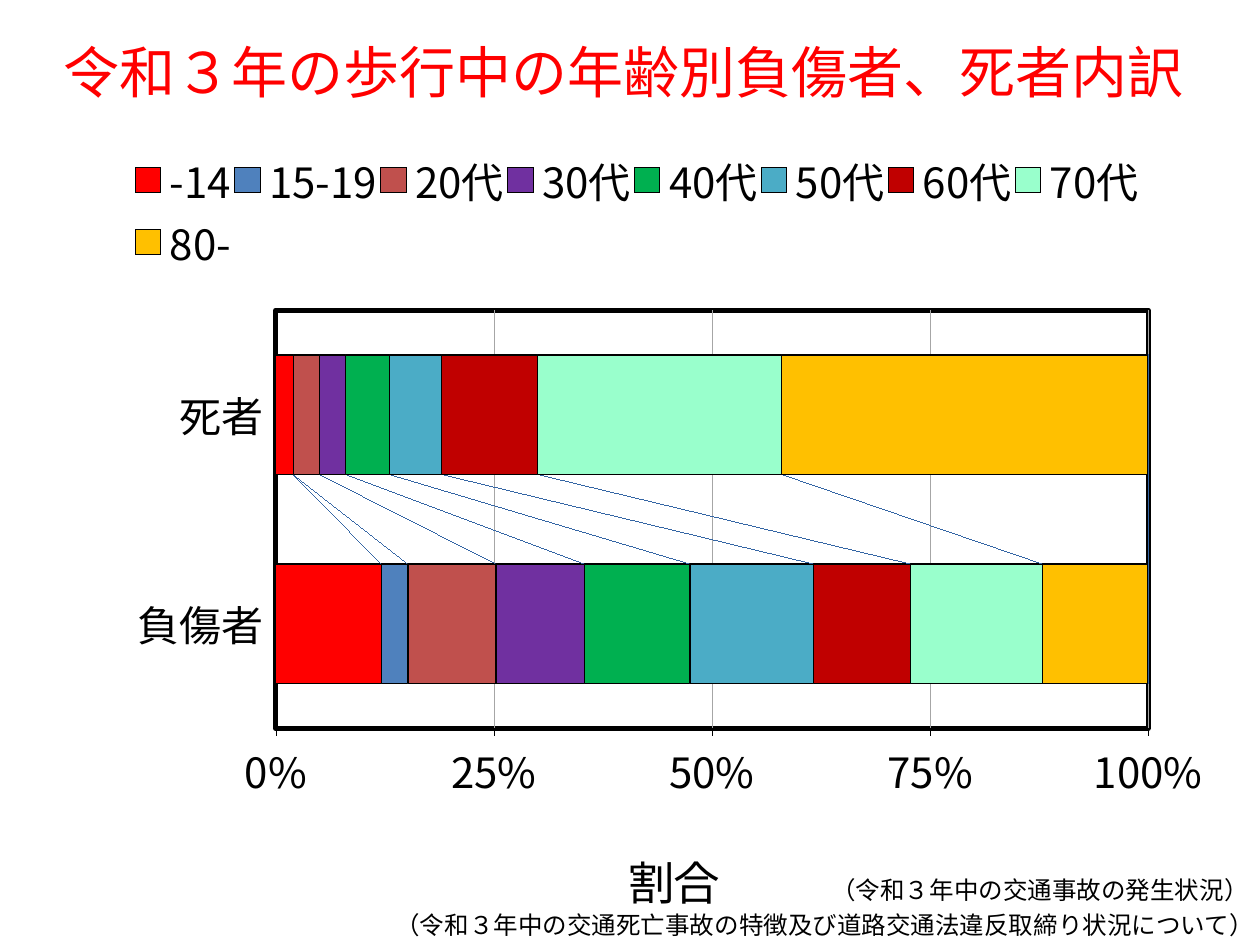
from lxml.etree import SubElement
from pptx import Presentation
from pptx.chart.data import CategoryChartData
from pptx.dml.color import RGBColor
from pptx.enum.chart import XL_CHART_TYPE, XL_LEGEND_POSITION, XL_TICK_LABEL_POSITION, XL_TICK_MARK
from pptx.enum.text import MSO_ANCHOR, PP_ALIGN
from pptx.oxml import parse_xml
from pptx.oxml.ns import nsdecls, qn
from pptx.util import Inches, Pt

FONT = "Noto Sans CJK JP"
WIDTH, HEIGHT = 10, 7.5
GROUPS = ["負傷者", "死者"]
AGES = [
    ("-14", (12, 2), "FF0000"),
    ("15-19", (3, 0), "4F81BD"),
    ("20代", (10, 3), "C0504D"),
    ("30代", (10, 3), "7030A0"),
    ("40代", (12, 5), "00B050"),
    ("50代", (14, 6), "4BACC6"),
    ("60代", (11, 11), "C00000"),
    ("70代", (15, 28), "99FFCC"),
    ("80-", (12, 42), "FFC000"),
]


def color(code):
    return RGBColor.from_string(code)


def box(left, top, width, height):
    return [Inches(v) for v in (left * WIDTH, top * HEIGHT, width * WIDTH, height * HEIGHT)]


def style_font(font, size, code="000000"):
    font.name, font.size, font.bold = FONT, Pt(size), False
    font.color.rgb = color(code)
    properties = font._element if hasattr(font, "_element") else font._rPr
    for old in properties.findall(qn("a:ea")):
        properties.remove(old)
    properties.find(qn("a:latin")).addnext(
        parse_xml(f'<a:ea {nsdecls("a")} typeface="{FONT}"/>'))


def write(frame, text, size=14, code="000000", align=PP_ALIGN.LEFT):
    paragraph = frame.paragraphs[0]
    paragraph.alignment = align
    run = paragraph.add_run()
    run.text = text
    style_font(run.font, size, code)


def style_line(line, code, width):
    line.color.rgb = color(code)
    line.width = Pt(width)


def manual_layout(parent, after, inner=False, **shares):
    for old in parent.findall(qn("c:layout")):
        parent.remove(old)
    layout = parse_xml(f'<c:layout {nsdecls("c")}/>')
    manual = SubElement(layout, qn("c:manualLayout"))
    if inner:
        SubElement(manual, qn("c:layoutTarget")).set("val", "inner")
    for mode in ("xMode", "yMode"):
        SubElement(manual, qn(f"c:{mode}")).set("val", "edge")
    for side, share in shares.items():
        SubElement(manual, qn(f"c:{side}")).set("val", str(share))
    if after is None:
        parent.insert(0, layout)
    else:
        after.addnext(layout)


def line_xml(tag, code, width):
    return parse_xml(
        f'<c:{tag} {nsdecls("c", "a")}><c:spPr><a:ln w="{Pt(width)}"><a:solidFill>'
        f'<a:srgbClr val="{code}"/></a:solidFill></a:ln></c:spPr></c:{tag}>')


def add_title(slide, area):
    title = slide.shapes.title
    title.left, title.top, title.width, title.height = area
    title.text_frame.vertical_anchor = MSO_ANCHOR.MIDDLE
    write(title.text_frame, "令和３年の歩行中の年齢別負傷者、死者内訳",
          size=32, code="FF0000", align=PP_ALIGN.CENTER)


def style_axes(chart):
    groups, shares = chart.category_axis, chart.value_axis
    for axis in (groups, shares):
        style_font(axis.tick_labels.font, 24)
        style_line(axis.format.line, "000000", 0.25)
        axis.minor_tick_mark = XL_TICK_MARK.NONE
    groups.major_tick_mark = XL_TICK_MARK.NONE
    groups.tick_label_position = XL_TICK_LABEL_POSITION.LOW
    shares.major_tick_mark = XL_TICK_MARK.OUTSIDE
    shares.minimum_scale, shares.maximum_scale, shares.major_unit = 0, 1, 0.25
    shares.tick_labels.number_format = "0%"
    shares.tick_labels.number_format_is_linked = False
    style_line(shares.major_gridlines.format.line, "A6A6A6", 0.25)
    heading = shares.axis_title
    write(heading.text_frame, "割合", size=26.6)
    manual_layout(heading._element, heading._element.find(qn("c:tx")), x=0.49, y=0.89)


def add_age_chart(slide, area):
    data = CategoryChartData()
    data.categories = GROUPS
    for age, counts, _ in AGES:
        data.add_series(age, counts)
    chart = slide.shapes.add_chart(XL_CHART_TYPE.BAR_STACKED_100, *area, data).chart
    style_font(chart.font, 26.6)
    chart.has_title = False
    bars = chart.plots[0]
    bars.gap_width, bars.overlap, bars.vary_by_categories = 75, 100, False
    for series, (_, _, fill) in zip(bars.series, AGES):
        series.format.fill.solid()
        series.format.fill.fore_color.rgb = color(fill)
        style_line(series.format.line, "000000", 0.75)
    bars._element.find(qn("c:overlap")).addnext(line_xml("serLines", "4A7EBB", 0.75))

    style_axes(chart)
    chart.has_legend = True
    legend = chart.legend
    legend.position = XL_LEGEND_POSITION.TOP
    legend.include_in_layout = False
    style_font(legend.font, 24)
    manual_layout(legend._element, legend._element.find(qn("c:legendPos")),
                  x=0.07, y=0.02, w=0.87, h=0.16)

    plot_area = bars._element.getparent()
    manual_layout(plot_area, None, inner=True, x=0.194, y=0.226, w=0.751, h=0.531)
    plot_area.append(line_xml("border", "000000", 3)[0])


def add_source(slide, area, text):
    frame = slide.shapes.add_textbox(*area).text_frame
    frame.word_wrap = False
    write(frame, text)


def main():
    deck = Presentation()
    deck.slide_width, deck.slide_height = Inches(WIDTH), Inches(HEIGHT)
    slide = deck.slides.add_slide(deck.slide_layouts[5])
    add_title(slide, box(0, 0.01, 0.99, 0.13))
    add_age_chart(slide, box(0.04, 0.14, 0.922, 0.841))
    add_source(slide, box(0.65, 0.919, 0.354, 0.045), "（令和３年中の交通事故の発生状況）")
    add_source(slide, box(0.304, 0.956, 0.707, 0.045),
               "（令和３年中の交通死亡事故の特徴及び道路交通法違反取締り状況について）")
    deck.save("out.pptx")


if __name__ == "__main__":
    main()
